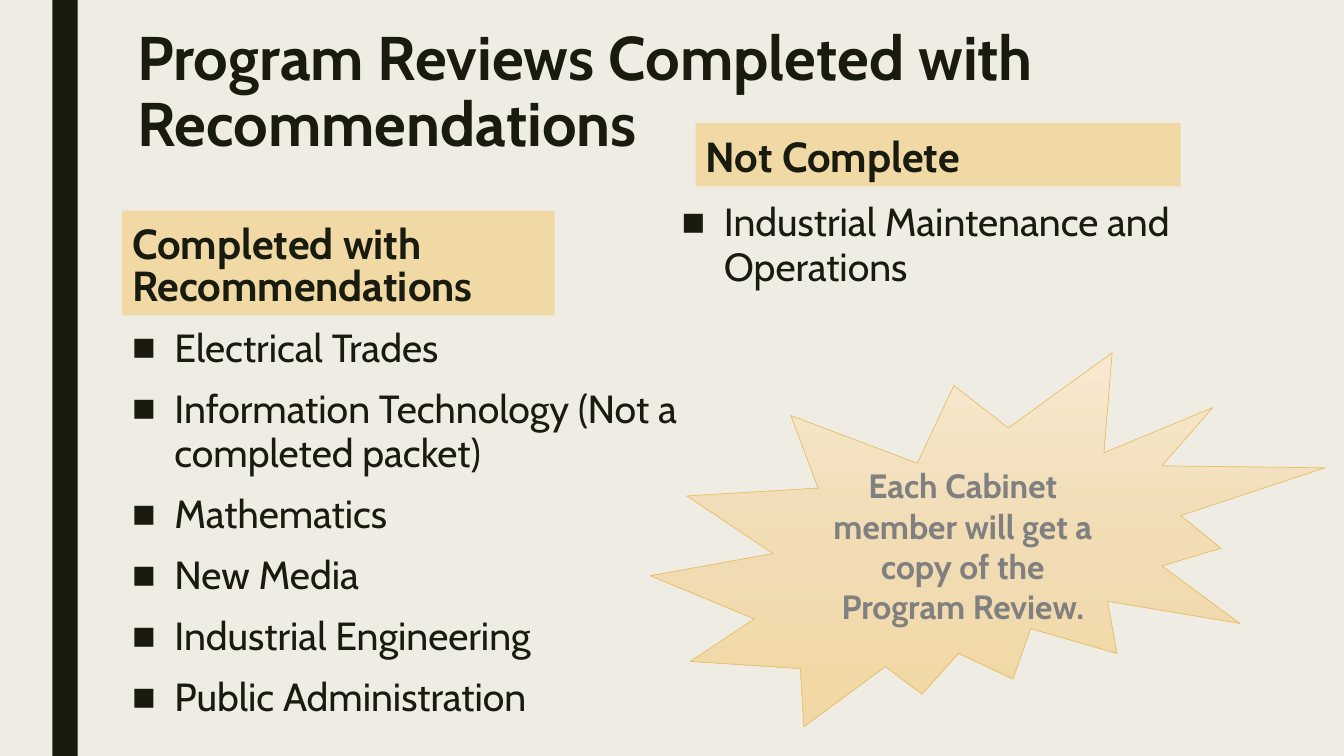
from copy import deepcopy

from lxml import etree
from pptx import Presentation
from pptx import util as u
from pptx.dml.color import RGBColor
from pptx.enum import shapes, text
from pptx.oxml.ns import qn

COLORS = {
    "background": "EFEDE3",
    "ink": "191B0E",
    "header": "F0D9A5",
    "burst_line": "E6C069",
    "burst_text": "808080",
}
BURST_STOPS = [(0, "F7E9D0"), (0.5, "F1DCB4"), (1, "F1D7A3")]
COMPLETED = [
    "Electrical Trades",
    "Information Technology (Not a completed packet)",
    "Mathematics",
    "New Media",
    "Industrial Engineering",
    "Public Administration",
]
NOT_COMPLETE = ["Industrial Maintenance and Operations"]


def rgb(name):
    """Return the named colour."""
    return RGBColor.from_string(COLORS[name])


class ReviewSlide:
    """Hold the style and the slide being built."""

    font = "Cabin"

    def __init__(self, prs):
        """Add a comparison slide with its background."""
        self.s = prs.slides.add_slide(prs.slide_layouts[4])
        self.holders = {sp.placeholder_format.idx: sp for sp in self.s.placeholders}
        fill = self.s.background.fill
        fill.solid()
        fill.fore_color.rgb = rgb("background")

    def style(self, p, size, color="ink", bold=False, align=text.PP_ALIGN.LEFT,
              line=1.0, before=0, after=0):
        """Format a paragraph and its runs."""
        p.alignment, p.line_spacing = align, line
        p.space_before, p.space_after = u.Pt(before), u.Pt(after)
        for r in p.runs:
            r.font.name, r.font.size, r.font.bold = self.font, u.Pt(size), bold
            r.font.color.rgb = rgb(color)

    def place(self, idx, box, anchor):
        """Move a placeholder and return its text frame."""
        sp = self.holders[idx]
        sp.left, sp.top, sp.width, sp.height = map(u.Inches, box)
        tf = sp.text_frame
        tf.word_wrap, tf.auto_size = True, text.MSO_AUTO_SIZE.NONE
        tf.vertical_anchor = anchor
        return tf

    def bar(self, box):
        """Draw the vertical side bar."""
        sp = self.s.shapes.add_shape(shapes.MSO_SHAPE.RECTANGLE, *map(u.Inches, box))
        sp.shadow.inherit = False
        sp.fill.solid()
        sp.fill.fore_color.rgb = rgb("ink")
        sp.line.fill.background()

    def title(self, words, box):
        """Fill the title."""
        tf = self.place(0, box, text.MSO_ANCHOR.TOP)
        tf.text = words
        self.style(tf.paragraphs[0], 44, bold=True, line=0.89)

    def header(self, idx, words, box):
        """Fill a column header on a coloured band."""
        tf = self.place(idx, box, text.MSO_ANCHOR.BOTTOM)
        tf.text = words
        self.style(tf.paragraphs[0], 30, bold=True, line=0.84)
        fill = self.holders[idx].fill
        fill.solid()
        fill.fore_color.rgb = rgb("header")

    def bullets(self, idx, items, box):
        """Fill a list with square bullets."""
        tf = self.place(idx, box, text.MSO_ANCHOR.TOP)
        tf.text = "\n".join(items)
        for p in tf.paragraphs:
            self.style(p, 28, line=0.94, before=10, after=2)
            pPr = p._p.get_or_add_pPr()
            pPr.set("marL", str(u.Inches(0.42)))
            pPr.set("indent", str(-u.Inches(0.42)))
            etree.SubElement(pPr, qn("a:buFont")).set("typeface", "Arial")
            etree.SubElement(pPr, qn("a:buChar")).set("char", "■")

    def burst(self, words, box):
        """Draw the starburst with its message."""
        sp = self.s.shapes.add_shape(shapes.MSO_SHAPE.EXPLOSION2, *map(u.Inches, box))
        sp.shadow.inherit = False
        sp.fill.gradient()
        sp.fill.gradient_angle = 270
        stops = sp._element.spPr.find(".//" + qn("a:gsLst"))
        stops.insert(1, deepcopy(stops[0]))
        for stop, (position, color) in zip(sp.fill.gradient_stops, BURST_STOPS):
            stop.position = position
            stop.color.rgb = RGBColor.from_string(color)
        sp.line.color.rgb = rgb("burst_line")
        sp.line.width = u.Pt(0.5)
        tf = sp.text_frame
        tf.word_wrap, tf.vertical_anchor = True, text.MSO_ANCHOR.MIDDLE
        tf.text = words
        self.style(tf.paragraphs[0], 24, "burst_text", True, text.PP_ALIGN.CENTER)


def main():
    """Build and save the slide."""
    prs = Presentation()
    prs.slide_width, prs.slide_height = u.Inches(13.33), u.Inches(7.5)
    s = ReviewSlide(prs)
    s.bar((0.52, 0, 0.25, 7.5))
    s.title("Program Reviews Completed with Recommendations", (1.26, 0.23, 10.5, 1.62))
    s.header(1, "Completed with Recommendations", (1.21, 2.09, 4.29, 1.04))
    s.bullets(2, COMPLETED, (1.21, 3.19, 6.22, 2.8))
    s.header(3, "Not Complete", (6.9, 1.22, 4.81, 0.63))
    s.bullets(4, NOT_COMPLETE, (6.66, 1.95, 5.88, 1.34))
    s.burst("Each Cabinet member will get a copy of the Program Review.",
            (6.45, 3.5, 6.69, 3.71))
    prs.save("out.pptx")


if __name__ == "__main__":
    main()
